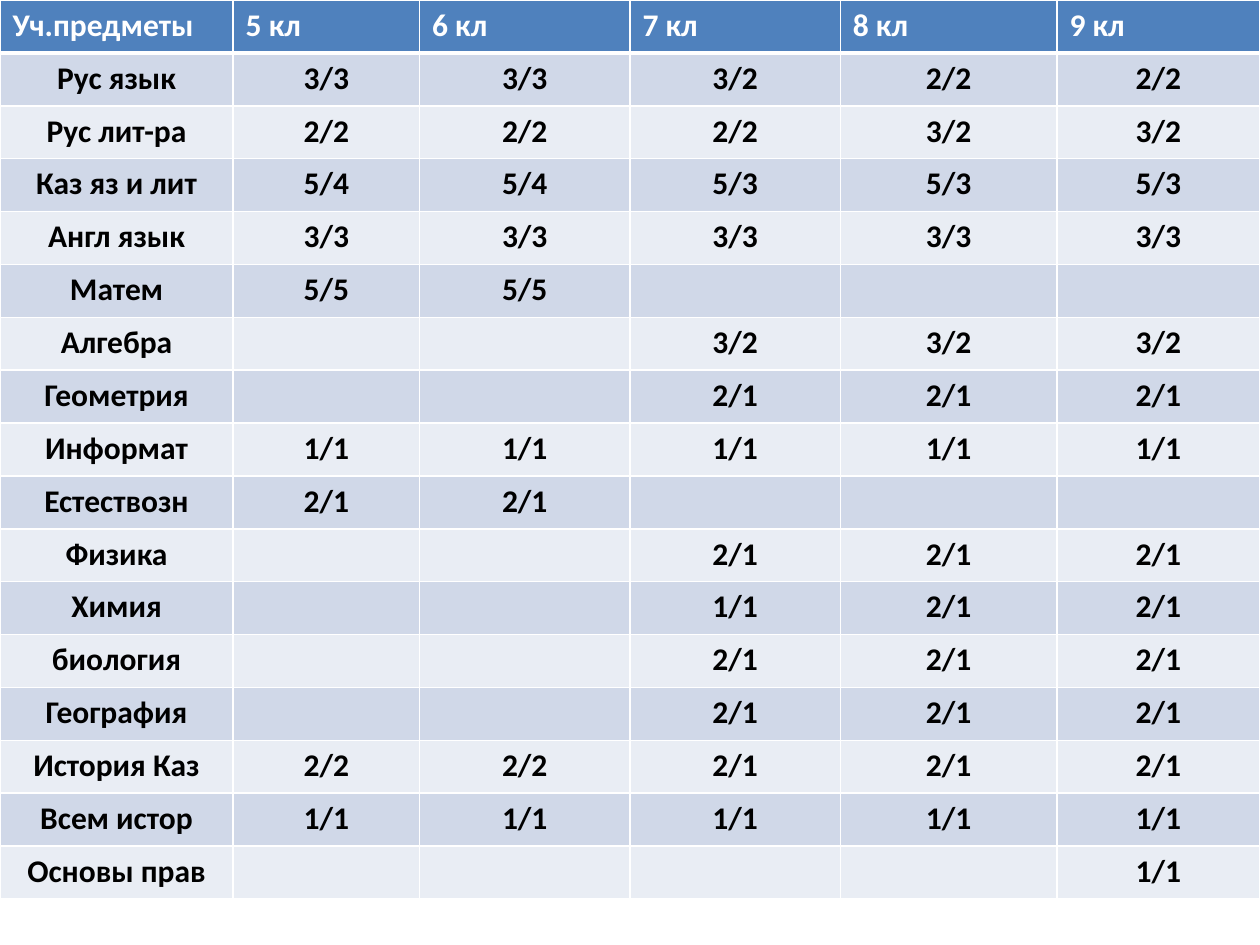
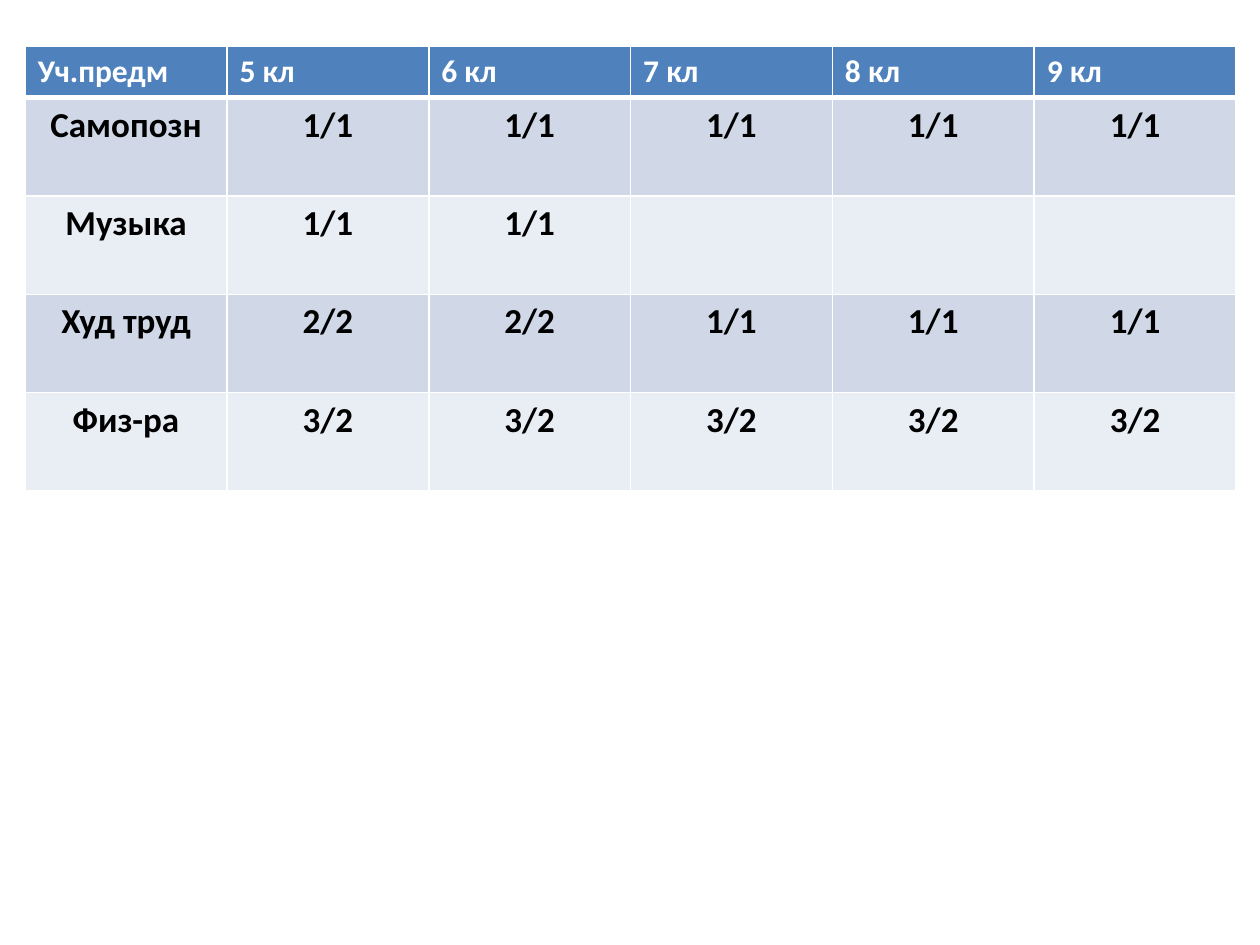
from dataclasses import dataclass

from lxml import etree
from pptx import Presentation
from pptx.dml.color import RGBColor
from pptx.enum.text import PP_ALIGN
from pptx.oxml.ns import qn
from pptx.util import Inches, Pt

LEFT, CENTER = PP_ALIGN.LEFT, PP_ALIGN.CENTER
FONT = "Calibri"
COLORS = {
    "header": "4F81BD",
    "band_dark": "D0D8E8",
    "band_light": "E9EDF4",
    "white": "FFFFFF",
    "black": "000000",
}
GRADES = [f"{grade} кл" for grade in range(5, 10)]
NO_LESSONS = "-"
THIN, THICK = 1, 3


@dataclass
class Subject:
    name: str
    hours: str  # one entry per grade

    def cells(self) -> list[str]:
        values = ["" if entry == NO_LESSONS else entry for entry in self.hours.split()]
        return [self.name] + values


@dataclass
class HoursTable:
    heading: str
    subjects: list[Subject]
    left: float
    top: float
    column_widths: list[float]
    header_height: float
    row_height: float
    body_size: int


MAIN_SUBJECTS = HoursTable(
    heading="Уч.предметы",
    subjects=[
        Subject("Рус язык", "3/3 3/3 3/2 2/2 2/2"),
        Subject("Рус лит-ра", "2/2 2/2 2/2 3/2 3/2"),
        Subject("Каз яз и лит", "5/4 5/4 5/3 5/3 5/3"),
        Subject("Англ язык", "3/3 3/3 3/3 3/3 3/3"),
        Subject("Матем", "5/5 5/5 - - -"),
        Subject("Алгебра", "- - 3/2 3/2 3/2"),
        Subject("Геометрия", "- - 2/1 2/1 2/1"),
        Subject("Информат", "1/1 1/1 1/1 1/1 1/1"),
        Subject("Естествозн", "2/1 2/1 - - -"),
        Subject("Физика", "- - 2/1 2/1 2/1"),
        Subject("Химия", "- - 1/1 2/1 2/1"),
        Subject("биология", "- - 2/1 2/1 2/1"),
        Subject("География", "- - 2/1 2/1 2/1"),
        Subject("История Каз", "2/2 2/2 2/1 2/1 2/1"),
        Subject("Всем истор", "1/1 1/1 1/1 1/1 1/1"),
        Subject("Основы прав", "- - - - 1/1"),
    ],
    left=0, top=0,
    column_widths=[1.85, 1.48, 1.67, 1.67, 1.72, 1.61],
    header_height=0.42, row_height=0.42, body_size=18,
)

OTHER_SUBJECTS = HoursTable(
    heading="Уч.предм",
    subjects=[
        Subject("Самопозн", "1/1 1/1 1/1 1/1 1/1"),
        Subject("Музыка", "1/1 1/1 - - -"),
        Subject("Худ труд", "2/2 2/2 1/1 1/1 1/1"),
        Subject("Физ-ра", "3/2 3/2 3/2 3/2 3/2"),
    ],
    left=0.2, top=0.37,
    column_widths=[9.61 / 6] * 6,
    header_height=0.4, row_height=0.78, body_size=20,
)


def set_borders(cell, top: int, bottom: int) -> None:
    """Give a cell white borders, with widths in points."""
    properties = cell._tc.get_or_add_tcPr()
    for side, width in (("L", THIN), ("R", THIN), ("T", top), ("B", bottom)):
        line = etree.SubElement(properties, qn(f"a:ln{side}"), w=str(Pt(width)))
        fill = etree.SubElement(line, qn("a:solidFill"))
        etree.SubElement(fill, qn("a:srgbClr"), val=COLORS["white"])


def write_text(cell, text: str, *, size: int, color: str, align) -> None:
    para = cell.text_frame.paragraphs[0]
    para.alignment = align
    if not text:
        return
    span = para.add_run()
    span.text = text
    span.font.name = FONT
    span.font.size = Pt(size)
    span.font.bold = True
    span.font.color.rgb = RGBColor.from_string(COLORS[color])


def draw_table(page, spec_table: HoursTable) -> None:
    rows = [[spec_table.heading] + GRADES]
    rows += [subject.cells() for subject in spec_table.subjects]
    heights = [spec_table.header_height] + [spec_table.row_height] * len(spec_table.subjects)
    widths = spec_table.column_widths
    table = page.shapes.add_table(
        len(rows), len(widths), Inches(spec_table.left), Inches(spec_table.top),
        Inches(sum(widths)), Inches(sum(heights)),
    ).table
    for column, width in zip(table.columns, widths):
        column.width = Inches(width)

    for index, (row, height, texts) in enumerate(zip(table.rows, heights, rows)):
        row.height = Inches(height)
        is_header = index == 0
        if is_header:
            band = "header"
            style = dict(size=18, color="white", align=LEFT)
        else:
            band = "band_dark" if index % 2 else "band_light"
            style = dict(size=spec_table.body_size, color="black", align=CENTER)
        for cell, text in zip(row.cells, texts):
            # The header is set off by a thick rule shared with the first row
            set_borders(cell, top=THICK if index == 1 else THIN,
                        bottom=THICK if is_header else THIN)
            cell.fill.solid()
            cell.fill.fore_color.rgb = RGBColor.from_string(COLORS[band])
            write_text(cell, text, **style)


def main() -> None:
    deck = Presentation()
    deck.slide_width, deck.slide_height = Inches(10), Inches(7.5)
    blank = deck.slide_layouts[6]
    for hours_table in (MAIN_SUBJECTS, OTHER_SUBJECTS):
        draw_table(deck.slides.add_slide(blank), hours_table)
    deck.save("out.pptx")


if __name__ == "__main__":
    main()
